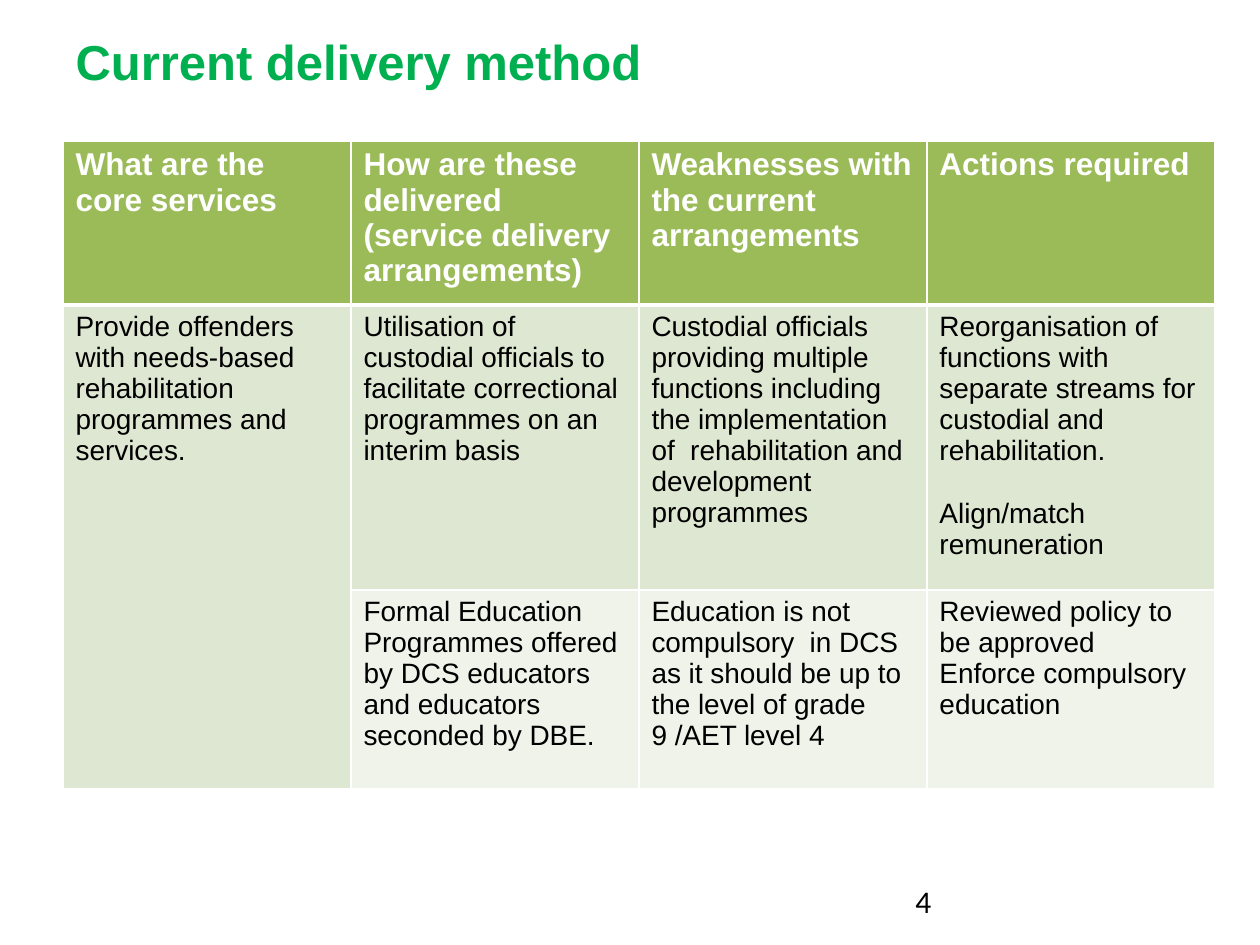
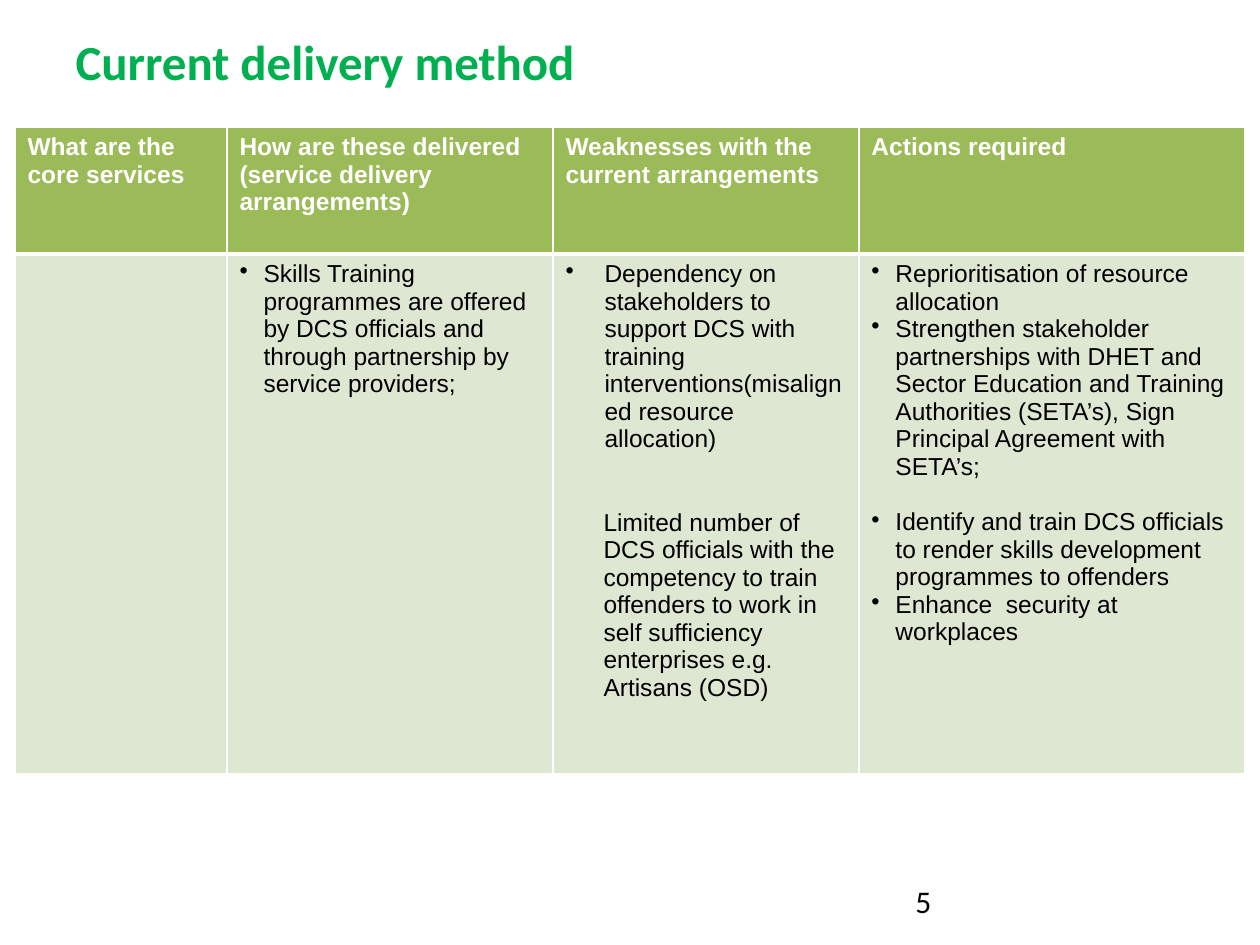
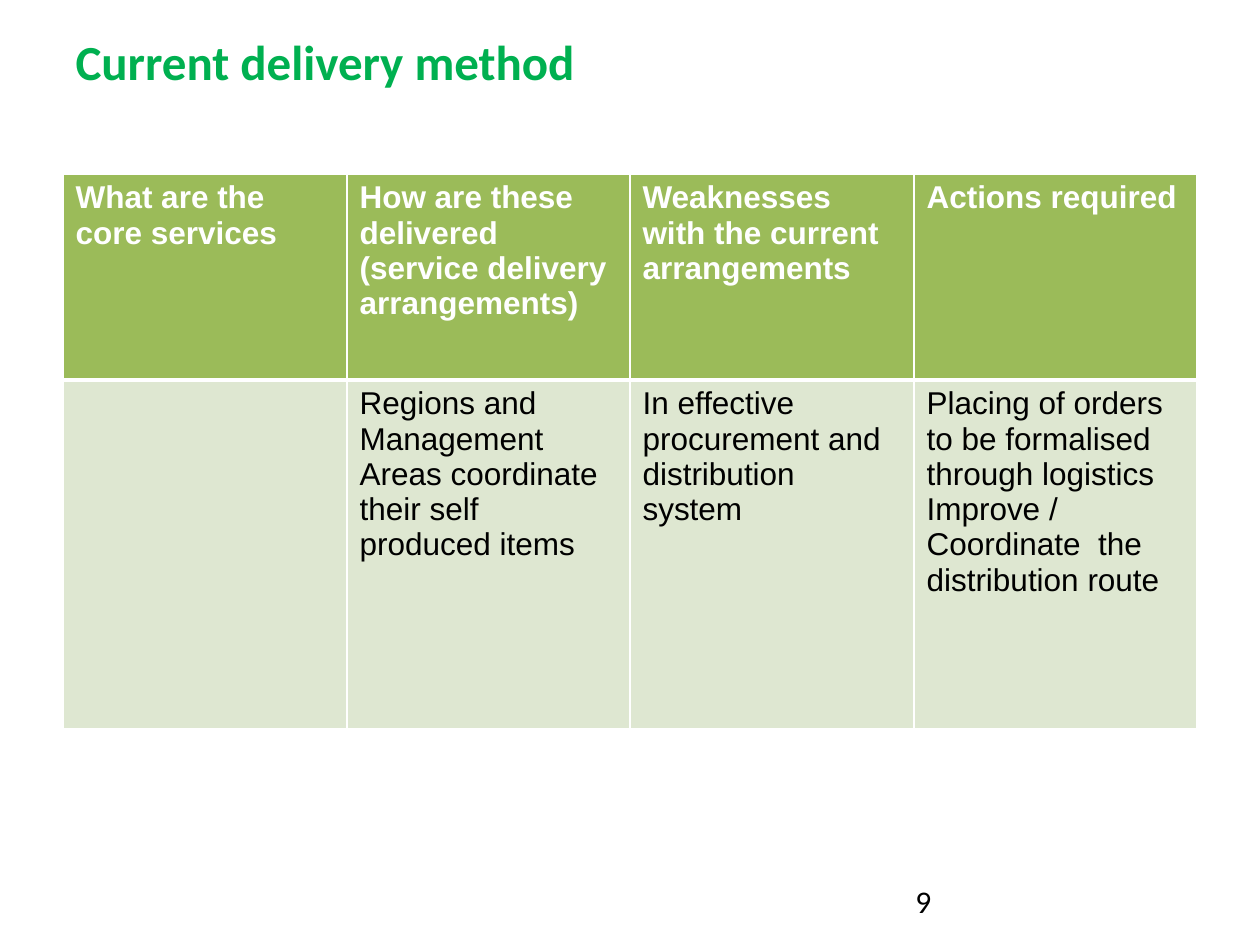
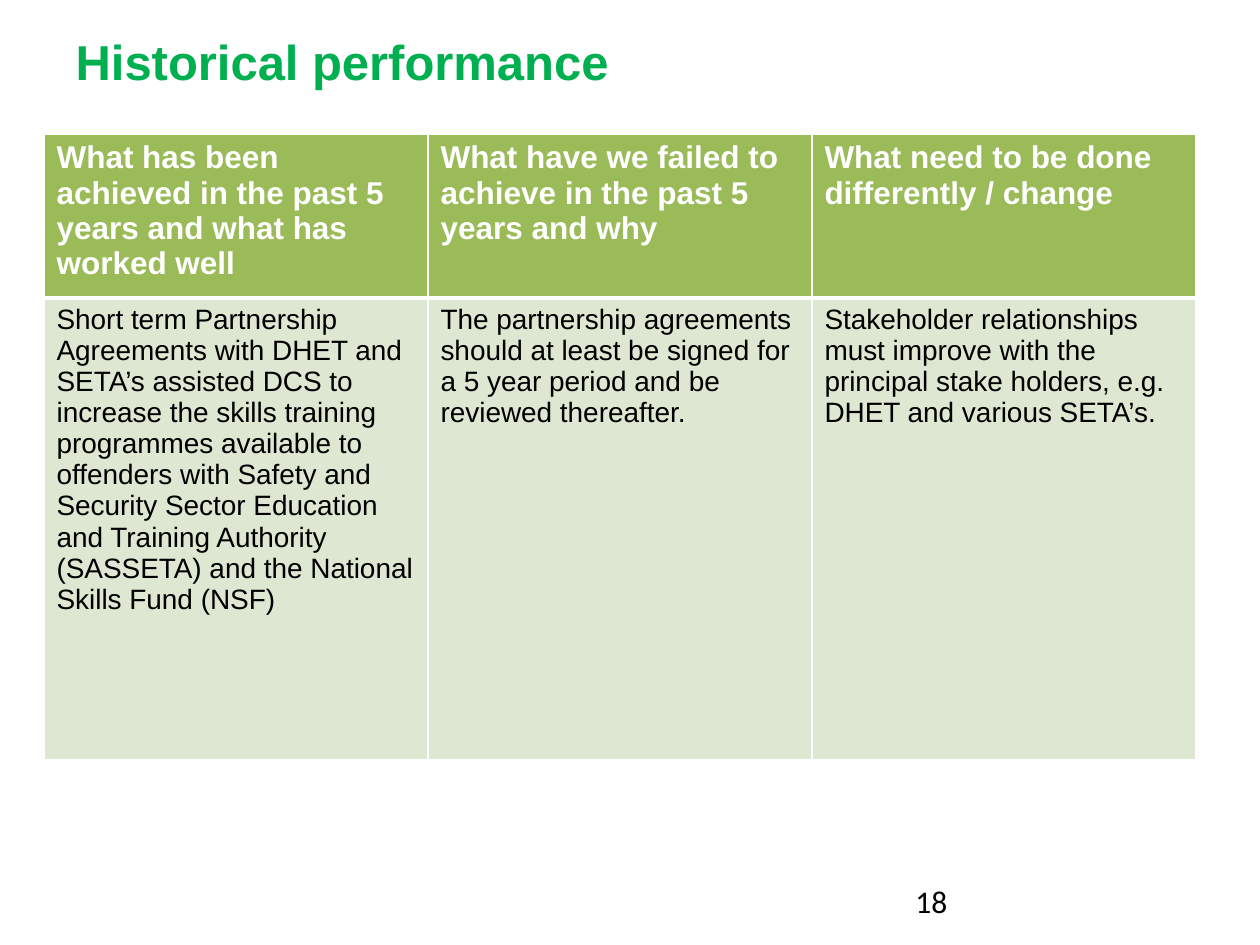
from lxml import etree
from pptx import Presentation
from pptx import util as u
from pptx.dml.color import RGBColor
from pptx.enum import text
from pptx.oxml import ns

GREEN = RGBColor(0x00, 0xB0, 0x50)
HEADER = RGBColor(0x9B, 0xBB, 0x59)
BAND_DARK = RGBColor(0xDE, 0xE7, 0xD1)
BAND_LIGHT = RGBColor(0xEF, 0xF3, 0xEA)
WHITE = RGBColor(0xFF, 0xFF, 0xFF)
BLACK = RGBColor(0x00, 0x00, 0x00)

SERVICE_HEADS = [
    "What are the core services",
    ["How are these delivered", "(service delivery arrangements)"],
    "Weaknesses with the current arrangements",
    "Actions required",
]


def px(n):
    return u.Emu(round(n * 914400 / 126))


def para(content, **fmt):
    return dict(fmt, content=content)


def bullet(content, indent=24, **fmt):
    return para(content, left=indent, hang=indent, char="•", **fmt)


def write_paragraph(p, content, size=18, font="Arial", color=BLACK, bold=False,
                    before=0, left=0, hang=0, char=None, level=0):
    p.alignment = text.PP_ALIGN.LEFT
    p.level = level
    if before:
        p.space_before = u.Pt(before)
    if left:
        pPr = p._p.get_or_add_pPr()
        pPr.set("marL", str(px(left)))
        pPr.set("indent", str(-px(hang)))
        if char:
            etree.SubElement(pPr, ns.qn("a:buChar")).set("char", char)
    r = p.add_run()
    r.text = content
    r.font.size = u.Pt(size)
    r.font.name = font
    r.font.bold = bold
    r.font.color.rgb = color


def write(tf, content, **fmt):
    tf.word_wrap = True
    items = content if isinstance(content, list) else [content]
    for i, item in enumerate(items):
        p = tf.paragraphs[0] if i == 0 else tf.add_paragraph()
        own = item if isinstance(item, dict) else para(item)
        write_paragraph(p, **{**fmt, **own})


def set_borders(cell, **widths):
    tcPr = cell._tc.get_or_add_tcPr()
    for i, side in enumerate("LRTB"):
        ln = etree.Element(ns.qn("a:ln" + side), w=str(u.Pt(widths.get(side, 1))))
        fill = etree.SubElement(ln, ns.qn("a:solidFill"))
        etree.SubElement(fill, ns.qn("a:srgbClr")).set("val", str(WHITE))
        tcPr.insert(i, ln)


class Deck:
    def __init__(self):
        self.prs = Presentation()
        self.prs.slide_width = px(1260)
        self.prs.slide_height = px(945)
        self.s = None

    def slide(self, title, number, font="Calibri"):
        self.s = self.prs.slides.add_slide(self.prs.slide_layouts[5])
        self.title(title, font)
        self.number(number)

    def title(self, content, font):
        sp = self.s.shapes.title
        sp.left, sp.top, sp.width, sp.height = map(px, (63, 25, 1134, 72))
        sp.text_frame.vertical_anchor = text.MSO_ANCHOR.TOP
        write(sp.text_frame, content, size=28, font=font, color=GREEN, bold=True)

    def number(self, number):
        sp = self.s.shapes.add_textbox(*map(px, (903, 876, 294, 50)))
        write(sp.text_frame, str(number), font="Calibri")

    def table(self, left, top, widths, heights, rows, head_size=18, body_size=16):
        frame = self.s.shapes.add_table(
            len(heights), len(widths),
            *map(px, (left, top, sum(widths), sum(heights))))
        table = frame.table
        table.horz_banding = False
        for column, width in zip(table.columns, widths):
            column.width = px(width)
        for row, height in zip(table.rows, heights):
            row.height = px(height)
        fills = [HEADER, BAND_DARK, BAND_LIGHT]
        for i, row in enumerate(rows):
            for j, content in enumerate(row):
                cell = table.cell(i, j)
                cell.fill.solid()
                cell.fill.fore_color.rgb = fills[i]
                set_borders(cell, T=3 if i == 1 else 1, B=3 if i == 0 else 1)
                if not content:
                    continue
                if i == 0:
                    write(cell.text_frame, content, size=head_size, color=WHITE, bold=True)
                else:
                    write(cell.text_frame, content, size=body_size)
        return table


def main():
    deck = Deck()

    deck.slide("Current delivery method", 4, font="Arial")
    table = deck.table(63, 141, [288] * 4, [154, 285, 199], [
        SERVICE_HEADS,
        ["Provide offenders with needs-based rehabilitation programmes and services.",
         "Utilisation of custodial officials to facilitate correctional programmes "
         "on an interim basis",
         "Custodial officials providing multiple functions including the "
         "implementation of  rehabilitation and development programmes",
         ["Reorganisation of functions with separate streams for custodial and "
          "rehabilitation.",
          para("Align/match  remuneration", before=18)]],
        [None,
         "Formal Education Programmes offered by DCS educators and educators "
         "seconded by DBE.",
         "Education is not compulsory  in DCS as it should be up to the level of "
         "grade 9 /AET level 4",
         ["Reviewed policy to be approved", "Enforce compulsory education"]],
    ])
    table.cell(1, 0).merge(table.cell(2, 0))

    deck.slide("Current delivery method", 5)
    deck.table(15, 127, [212, 326, 306, 386], [127, 520], [
        SERVICE_HEADS,
        [None,
         bullet("Skills Training programmes are offered by DCS officials and through "
                "partnership by service providers;"),
         [bullet("Dependency on stakeholders to support DCS with training "
                 "interventions(misaligned resource allocation)", indent=39),
          para("Limited number of DCS officials with the competency to train "
               "offenders to work in self sufficiency enterprises e.g. Artisans (OSD)",
               left=38, level=1, before=32)],
         [bullet("Reprioritisation of resource allocation"),
          bullet("Strengthen stakeholder partnerships with DHET and Sector Education "
                 "and Training Authorities (SETA’s), Sign Principal Agreement with "
                 "SETA’s;"),
          bullet("Identify and train DCS officials to render skills development "
                 "programmes to offenders", before=16),
          bullet("Enhance  security at workplaces")]],
    ], head_size=14, body_size=14)

    deck.slide("Current delivery method", 9)
    deck.table(63, 174, [284, 283] * 2, [206, 349], [
        SERVICE_HEADS,
        [None,
         "Regions and Management Areas coordinate their self produced items",
         "In effective procurement and distribution system",
         ["Placing of orders to be formalised through logistics",
          "Improve / Coordinate  the distribution route"]],
    ], body_size=18)

    deck.slide("Historical performance", 18, font="Arial")
    deck.table(44, 134, [384] * 3, [154, 462], [
        ["What has been achieved in the past 5 years and what has worked well",
         "What have we failed to achieve in the past 5 years and why",
         "What need to be done differently / change"],
        ["Short term Partnership Agreements with DHET and SETA’s assisted DCS to "
         "increase the skills training programmes available to offenders with Safety "
         "and Security Sector Education and Training Authority (SASSETA) and the "
         "National Skills Fund (NSF)",
         "The partnership agreements should at least be signed for a 5 year period "
         "and be reviewed thereafter.",
         "Stakeholder relationships must improve with the principal stake holders, "
         "e.g. DHET and various SETA’s."],
    ])

    deck.prs.save("out.pptx")


if __name__ == "__main__":
    main()
